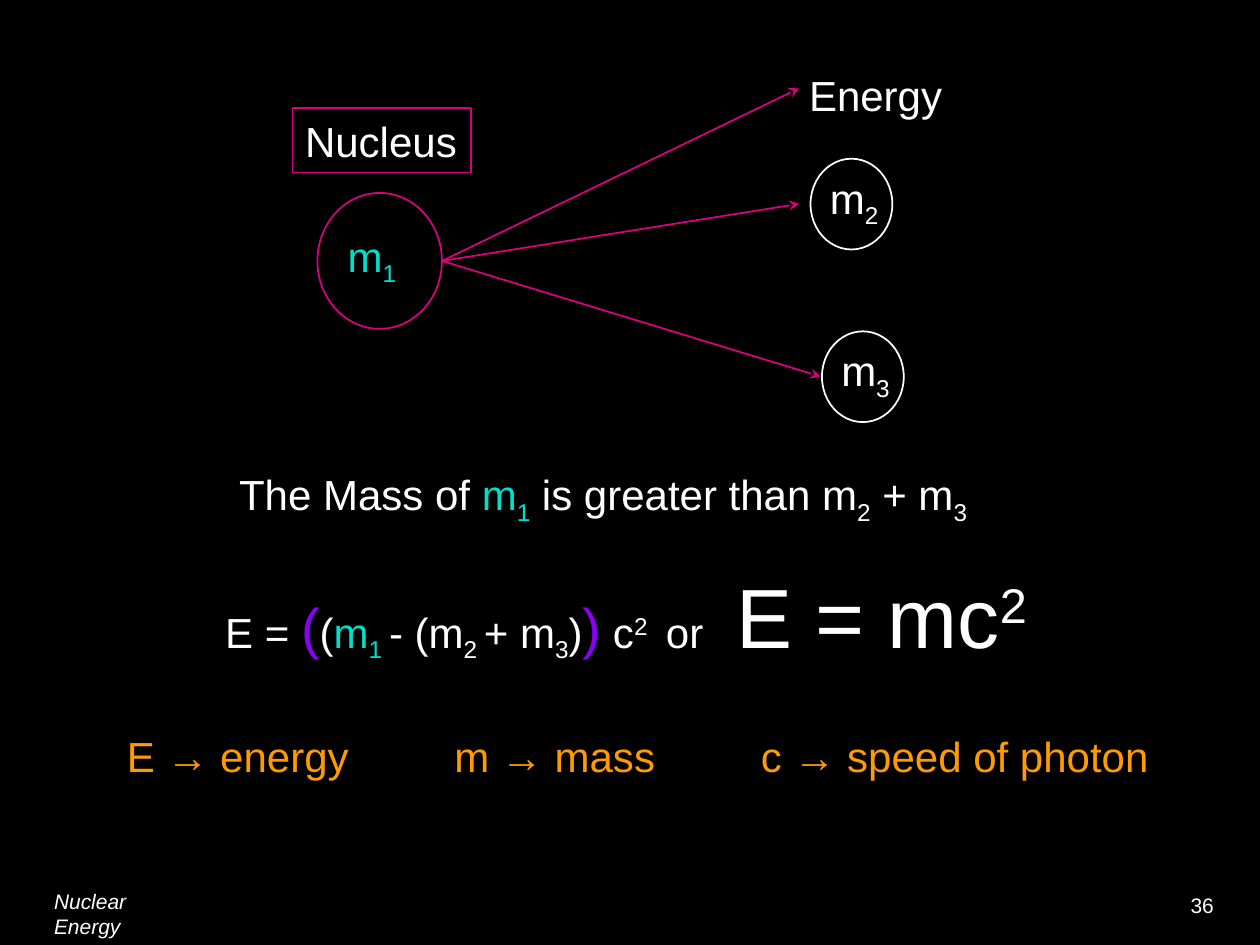
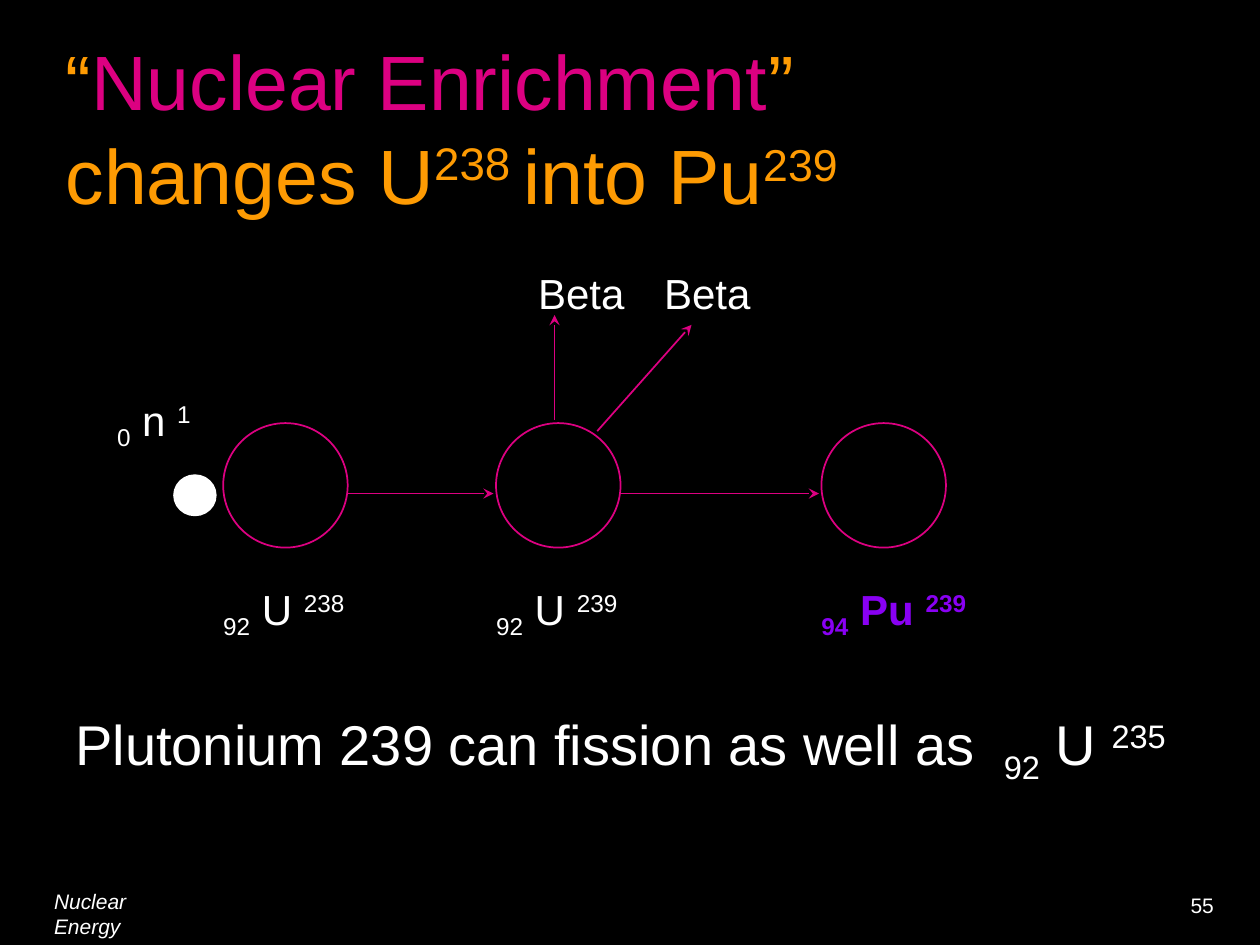
from dataclasses import dataclass
from itertools import pairwise

from lxml.etree import SubElement
from pptx import Presentation
from pptx.dml.color import RGBColor
from pptx.enum.shapes import MSO_CONNECTOR, MSO_SHAPE
from pptx.enum.text import MSO_ANCHOR, MSO_AUTO_SIZE, PP_ALIGN
from pptx.oxml.ns import qn
from pptx.util import Cm, Pt

COLORS = {
    "background": "000000",
    "text": "FFFFFF",
    "accent": "DC0081",
    "title": "FE9B03",
    "mass": "00DFCA",
    "highlight": "8901F3",
}
FONT = "Arial"
LABEL_HEIGHT = 1.27
SUBSCRIPT, SUPERSCRIPT = -25, 30
TITLE_ONLY, BLANK = 5, 6


@dataclass
class Span:
    text: str
    color: str = "text"
    size: int = 24
    baseline: int = 0
    bold: bool = False
    italic: bool = False


def sub(text, color="text", **style):
    return Span(text, color, baseline=SUBSCRIPT, **style)


def sup(text, color="text", **style):
    return Span(text, color, baseline=SUPERSCRIPT, **style)


def rgb(name):
    return RGBColor.from_string(COLORS[name])


# Shared drawing helpers; all lengths are centimetres

def write(frame, spans, align=PP_ALIGN.LEFT, tabs=()):
    """Fill a text frame with one paragraph of formatted spans."""
    para = frame.paragraphs[0]
    para.alignment = align
    for span in spans:
        run = para.add_run()
        run.text = span.text
        font = run.font
        font.name, font.size = FONT, Pt(span.size)
        font.bold, font.italic = span.bold, span.italic
        font.color.rgb = rgb(span.color)
        if span.baseline:
            font._element.set("baseline", str(span.baseline * 1000))
    if tabs:
        tab_list = SubElement(para._p.get_or_add_pPr(), qn("a:tabLst"))
        for position in tabs:
            SubElement(tab_list, qn("a:tab"), pos=str(Cm(position)), algn="l")


def add_text(page, left, top, width, height, spans, wrap=False, **layout):
    box = page.shapes.add_textbox(Cm(left), Cm(top), Cm(width), Cm(height))
    box.text_frame.word_wrap = wrap
    write(box.text_frame, spans, **layout)


def add_outline(page, kind, left, top, width, height, color="accent", fill=None):
    shape = page.shapes.add_shape(kind, Cm(left), Cm(top), Cm(width), Cm(height))
    shape.shadow.inherit = False
    if fill:
        shape.fill.solid()
        shape.fill.fore_color.rgb = rgb(fill)
    else:
        shape.fill.background()
    shape.line.color.rgb = rgb(color)
    shape.line.width = Pt(1)
    return shape


def add_arrow(page, start, end):
    arrow = page.shapes.add_connector(
        MSO_CONNECTOR.STRAIGHT, *(Cm(value) for value in (*start, *end)))
    arrow.line.color.rgb = rgb("accent")
    arrow.line.width = Pt(1)
    SubElement(arrow.line._get_or_add_ln(), qn("a:tailEnd"), type="stealth")
    SubElement(arrow._element.spPr, qn("a:effectLst"))


def add_footer(page, number):
    add_text(page, 0.84, 17.78, 2.8, 0.76,
             [Span("Nuclear Energy", size=12, italic=True)], wrap=True)
    add_text(page, 23.75, 17.86, 1.02, 0.76, [Span(number, size=12)])


# Mass and energy page

def draw_fission(page, left, top):
    """Nucleus m1 splitting into energy, m2 and m3."""
    title_box = add_outline(page, MSO_SHAPE.RECTANGLE, left, top + 0.91, 3.6, 1.3)
    title_box.text_frame.word_wrap = False
    write(title_box.text_frame, [Span("Nucleus")])

    # Parent nucleus
    add_outline(page, MSO_SHAPE.OVAL, left + 0.5, top + 2.62, 2.51, 2.74)
    add_text(page, left + 0.86, top + 3.25, 1.52, LABEL_HEIGHT,
             [Span("m", "mass"), sub("1", "mass")])

    # Products
    add_text(page, left + 10.16, top, 3.2, LABEL_HEIGHT, [Span("Energy")])
    for index, across, down in (("2", 10.44, 1.93), ("3", 10.67, 5.41)):
        add_outline(page, MSO_SHAPE.OVAL, left + across, top + down, 1.65, 1.83, "text")
        add_text(page, left + across + 0.14, top + down + 0.15, 1.52, LABEL_HEIGHT,
                 [Span("m"), sub(index)])

    # Arrows from the nucleus to each product
    for across, down in ((10.21, 0.51), (10.21, 2.84), (10.64, 6.32)):
        add_arrow(page, (left + 3.01, top + 3.99), (left + across, top + down))


def draw_equations(page, left, top):
    """Mass comparison, energy formula and legend of its symbols."""
    add_text(page, left + 2.26, top, 17.5, LABEL_HEIGHT, [
        Span("The Mass of "), Span("m", "mass"), sub("1", "mass"),
        Span(" is greater than m"), sub("2"), Span(" + m"), sub("3"),
    ], wrap=True)

    add_text(page, left + 1.98, top + 1.93, 18.5, 2.29, [
        Span("E = "), Span("(", "highlight", 32), Span("("),
        Span("m", "mass"), sub("1 ", "mass"),
        Span("- (m"), sub("2 "), Span("+ m"), sub("3"), Span(")"),
        Span(")", "highlight", 32), Span(" c"), sup("2 "), Span(" or\t"),
        Span("E = mc", size=48), sup("2", size=48),
    ], wrap=True, tabs=[10.3])

    add_text(page, left, top + 5.28, 22, LABEL_HEIGHT,
             [Span("E → energy\tm → mass\tc → speed of photon", "title")],
             wrap=True, tabs=[6.6, 12.78])


def build_mass_energy(deck):
    page = deck.slides.add_slide(deck.slide_layouts[BLANK])
    draw_fission(page, 5.9, 1.27)
    draw_equations(page, 2.31, 9.32)
    add_footer(page, "36")


# Enrichment page

def set_title(page, left, top, width, height):
    title = page.shapes.title
    title.left, title.top = Cm(left), Cm(top)
    title.width, title.height = Cm(width), Cm(height)
    frame = title.text_frame
    frame.word_wrap = True
    frame.auto_size = MSO_AUTO_SIZE.NONE
    frame.vertical_anchor = MSO_ANCHOR.MIDDLE
    write(frame, [
        Span("“", "title", 44), Span("Nuclear Enrichment", "accent", 44),
        Span("” changes U", "title", 44), sup("238 ", "title", size=45),
        Span("into Pu", "title", 44), sup("239", "title", size=44),
    ])


def draw_neutron(page, left, top):
    add_text(page, left, top, 2.08, LABEL_HEIGHT, [sub("0"), Span(" n "), sup("1")])
    add_outline(page, MSO_SHAPE.OVAL, left + 1.4, top + 1.76, 0.84, 0.81,
                "text", fill="text")


def draw_beta_decay(page, left, top):
    """Two beta particles leaving the atom whose corner is given."""
    for across in (0.59, 3.13):
        add_text(page, left + across, top - 3.27, 2.26, LABEL_HEIGHT,
                 [Span("Beta")], align=PP_ALIGN.CENTER)
    for x1, y1, x2, y2 in ((1.18, -0.07, 1.18, -2.18), (2.04, 0.16, 3.94, -1.98)):
        add_arrow(page, (left + x1, top + y1), (left + x2, top + y2))


def draw_atoms(page, left, top):
    """Chain of isotopes, joined by arrows."""
    diameter = 2.51
    isotopes = (
        (0, "92", "U", "238", {}),
        (5.5, "92", "U", "239", {}),
        (12.06, "94", "Pu", "239", {"color": "highlight", "bold": True}),
    )
    for across, protons, symbol, nucleons, style in isotopes:
        add_outline(page, MSO_SHAPE.OVAL, left + across, top, diameter, diameter)
        add_text(page, left + across - 0.25, top + 3.1,
                 3.63 if style else 3.15, LABEL_HEIGHT,
                 [sub(protons, **style), Span(f" {symbol} ", **style),
                  sup(nucleons, **style)])
    for here, following in pairwise(isotopes):
        add_arrow(page, (left + here[0] + diameter, top + 1.42),
                  (left + following[0] - 0.05, top + 1.42))
    draw_beta_decay(page, left + isotopes[1][0], top)


def build_enrichment(deck):
    page = deck.slides.add_slide(deck.slide_layouts[TITLE_ONLY])
    set_title(page, 1.07, 0.43, 21.3, 4.24)
    draw_neutron(page, 2.11, 7.82)
    draw_atoms(page, 4.5, 8.53)
    # Conclusion
    add_text(page, 1.27, 14.17, 23.06, 1.6, [
        Span("Plutonium 239 can fission as well as\t", size=32),
        sub("92", size=32), Span(" U ", size=32), sup("235", size=32),
    ], wrap=True, tabs=[18.72])
    add_footer(page, "55")


def main():
    deck = Presentation()
    deck.slide_width, deck.slide_height = Cm(25.4), Cm(19.05)
    background = deck.slide_master.background.fill
    background.solid()
    background.fore_color.rgb = rgb("background")
    build_mass_energy(deck)
    build_enrichment(deck)
    deck.save("out.pptx")


if __name__ == "__main__":
    main()
